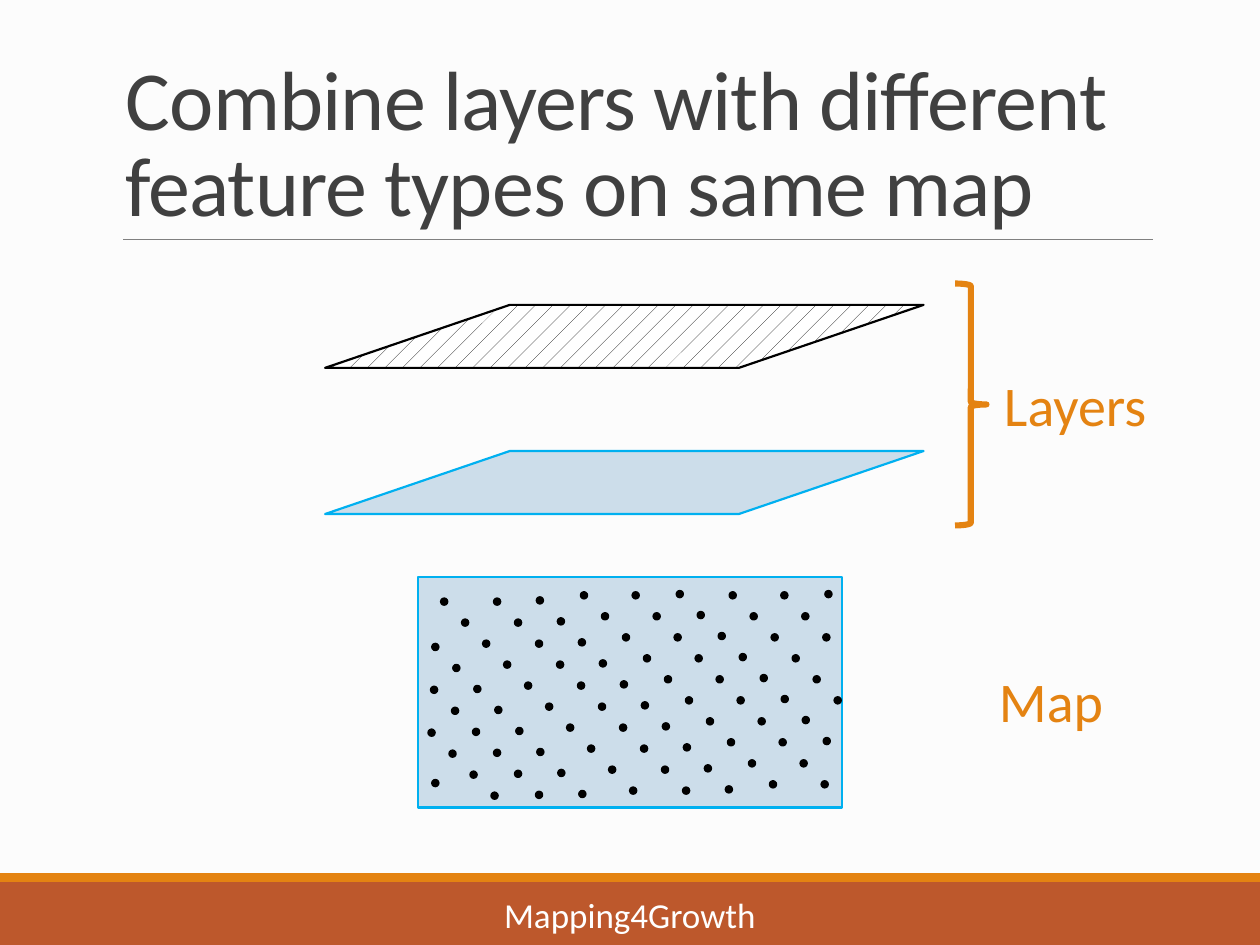
"""Build a slide on combining map layers with different feature types."""
from lxml.etree import SubElement
from pptx import Presentation
from pptx.dml.color import RGBColor
from pptx.enum.dml import MSO_PATTERN as Pattern
from pptx.enum.shapes import MSO_CONNECTOR as Connector, MSO_SHAPE as Shape
from pptx.enum.text import MSO_ANCHOR as Anchor, MSO_AUTO_SIZE as AutoSize, PP_ALIGN as Align
from pptx.oxml.ns import qn
from pptx.util import Inches, Pt

color = RGBColor.from_string
ORANGE, BLACK, WATER, SHORE = "E48312", "000000", "CCDDEA", "00B0F0"

deck = Presentation()
deck.slide_width, deck.slide_height = Inches(10), Inches(7.5)
page = deck.slides.add_slide(deck.slide_layouts[6])
page.background.fill.solid()
page.background.fill.fore_color.rgb = color("FCFCFC")


def add_figure(kind, place, fill=None, line=None, width=1.25):
    """Add a preset shape with a plain fill and outline."""
    figure = page.shapes.add_shape(kind, *map(Inches, place))
    figure.shadow.inherit = False
    if fill:
        figure.fill.solid()
        figure.fill.fore_color.rgb = color(fill)
    else:
        figure.fill.background()
    if line:
        figure.line.color.rgb = color(line)
        figure.line.width = Pt(width)
    else:
        figure.line.fill.background()
    return figure


def add_label(text, place, size, ink, frame_format, para_format):
    """Add a one-paragraph text box and return its span."""
    box = page.shapes.add_textbox(*map(Inches, place))
    para = box.text_frame.paragraphs[0]
    span = para.add_run()
    span.text = text
    font_format = {"name": "Calibri", "size": Pt(size)}
    for target, values in (
        (box.text_frame, frame_format),
        (para, para_format),
        (span.font, font_format),
    ):
        for name, value in values.items():
            setattr(target, name, value)
    span.font.color.rgb = color(ink)
    return span


add_figure(Shape.RECTANGLE, (0, 7, 10, 0.5), "BD582C")
add_figure(Shape.RECTANGLE, (0, 6.93, 10, 0.07), ORANGE)

rule = page.shapes.add_connector(Connector.STRAIGHT, *map(Inches, (0.98, 1.9, 9.15, 1.9)))
rule.line.color.rgb = color("808080")
rule.line.width = Pt(0.5)
SubElement(rule.line._get_or_add_ln().getparent(), qn("a:effectLst"))

title = add_label(
    "Combine layers with different feature types on same map",
    (0.9, 0.31, 8.25, 1.59), 48, "404040",
    {"word_wrap": True, "vertical_anchor": Anchor.BOTTOM}, {"line_spacing": 0.85},
)
title.font._element.set("spc", "-50")
add_label(
    "Mapping4Growth", (3.02, 7.06, 3.96, 0.4), 20, "FFFFFF",
    {"word_wrap": True, "vertical_anchor": Anchor.MIDDLE}, {"alignment": Align.CENTER},
)

dotted_layer = add_figure(Shape.PARALLELOGRAM, (2.58, 2.42, 4.75, 0.5), "FFFFFF", BLACK)
dotted_layer.fill.patterned()
dotted_layer.fill.pattern = Pattern.PERCENT_5
dotted_layer.fill.fore_color.rgb = color(BLACK)
dotted_layer.fill.back_color.rgb = color("FFFFFF")
water_layer = add_figure(Shape.PARALLELOGRAM, (2.58, 3.58, 4.75, 0.5), WATER, SHORE)
combined_map = add_figure(Shape.PARALLELOGRAM, (3.32, 4.58, 3.36, 1.83), WATER, SHORE)
for sheet, slant in ((dotted_layer, 2.932), (water_layer, 2.932), (combined_map, 0)):
    sheet.adjustments[0] = slant

dot_diagonals = [
    (3.5, 4.75, 10), (3.92, 4.75, 10), (4.26, 4.74, 10), (4.61, 4.7, 10), (5.02, 4.7, 10),
    (5.37, 4.69, 8), (5.79, 4.7, 6), (6.2, 4.7, 3), (6.55, 4.69, 1),
    (3.4, 5.79, 4), (3.42, 5.45, 6), (3.43, 5.11, 8), (3.43, 6.19, 1),
]
for left, top, count in dot_diagonals:
    for step in range(count):
        shift = step / 6
        add_figure(Shape.OVAL, (left + shift, top + shift, 0.05, 0.05), BLACK, BLACK)

add_figure(Shape.RIGHT_BRACE, (7.58, 2.25, 0.25, 1.92), line=ORANGE, width=3.5)
for text, place in (("Layers", (7.87, 2.89, 1.34, 0.64)), ("Map", (7.83, 5.24, 1.04, 0.64))):
    add_label(
        text, place, 32, ORANGE,
        {"word_wrap": False, "auto_size": AutoSize.SHAPE_TO_FIT_TEXT}, {},
    )

deck.save("out.pptx")
